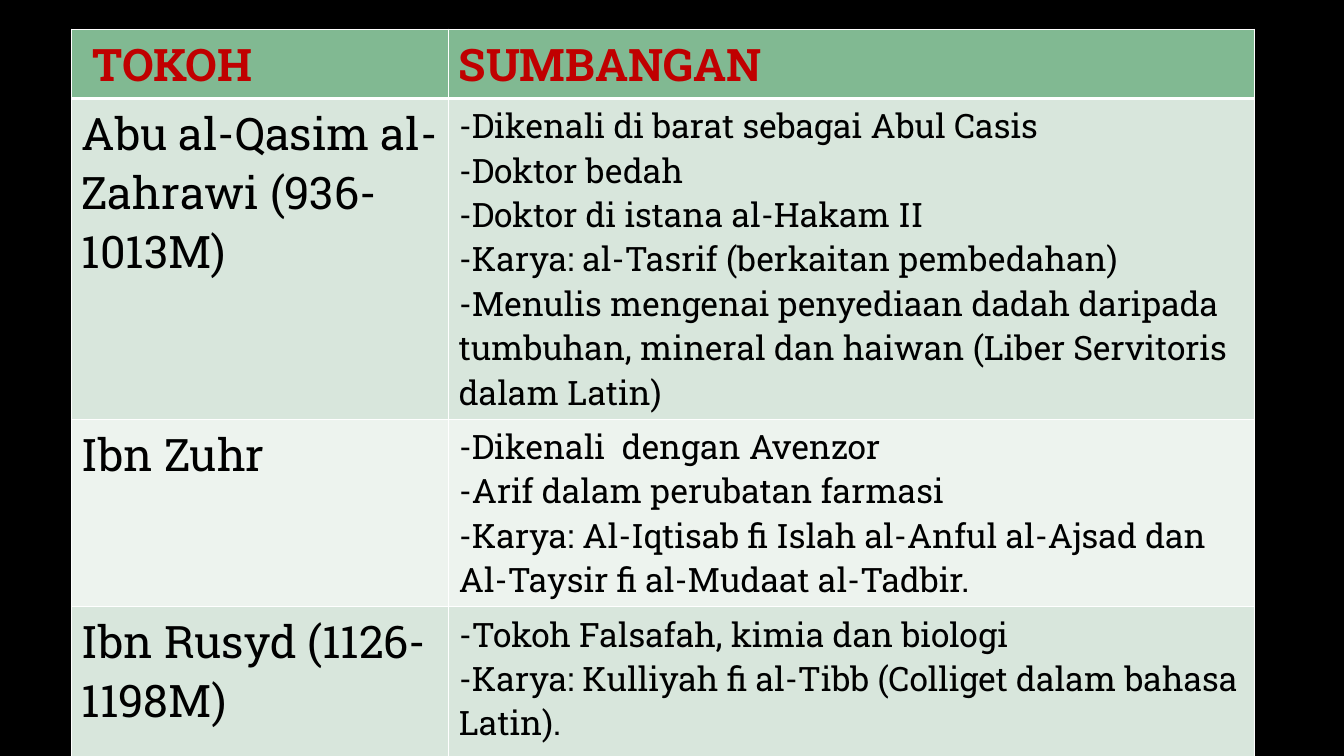
from dataclasses import dataclass

from lxml.etree import SubElement
from pptx import Presentation
from pptx.dml.color import RGBColor as Color
from pptx.oxml.ns import qn
from pptx.table import _Cell as Cell
from pptx.util import Inches, Pt

BLACK = RGB_TEXT = Color(0x00, 0x00, 0x00)
WHITE = Color(0xFF, 0xFF, 0xFF)
RED = Color(0xC0, 0x00, 0x00)
GREEN = Color(0x81, 0xB9, 0x92)
MINT = Color(0xD8, 0xE6, 0xDC)
PALE = Color(0xED, 0xF3, 0xEE)

FONT = "Roboto Slab"
WIDE, HIGH = Inches(13.33), Inches(7.5)
# Shares of the slide's size, in percent
LEFT, TOP = 5.33, 3.87
COLS = (28.06, 59.94)


@dataclass
class Row:
    name: str
    works: list[str]
    share: float
    fill: Color
    ink: Color = RGB_TEXT
    size: int = 24
    head: bool = False


ROWS = [
    Row(" TOKOH", ["SUMBANGAN"], 9.07, GREEN, RED, 32, True),
    Row("Abu al-Qasim al-Zahrawi (936-1013M)", [
        "-Dikenali di barat sebagai Abul Casis",
        "-Doktor bedah",
        "-Doktor di istana al-Hakam II",
        "-Karya: al-Tasrif (berkaitan pembedahan)",
        "-Menulis mengenai penyediaan dadah daripada tumbuhan, "
        "mineral dan haiwan (Liber Servitoris dalam Latin)",
    ], 36.67, MINT),
    Row("Ibn Zuhr", [
        "-Dikenali  dengan Avenzor",
        "-Arif dalam perubatan farmasi",
        "-Karya: Al-Iqtisab fi Islah al-Anful al-Ajsad dan "
        "Al-Taysir fi al-Mudaat al-Tadbir.",
    ], 21.47, PALE),
    Row("Ibn Rusyd (1126-1198M)", [
        "-Tokoh Falsafah, kimia dan biologi",
        "-Karya: Kulliyah fi al-Tibb (Colliget dalam bahasa Latin).",
    ], 22.4, MINT),
]


def across(share: float) -> int:
    return round(WIDE * share / 100)


def down(share: float) -> int:
    return round(HIGH * share / 100)


def edge(cell: Cell, top: int, bottom: int) -> None:
    """Rule the cell in white; call before its fill is set, as XML order asks."""
    props = cell._tc.get_or_add_tcPr()
    for side, width in (("L", 1), ("R", 1), ("T", top), ("B", bottom)):
        line = SubElement(props, qn(f"a:ln{side}"), w=str(Pt(width)))
        paint = SubElement(line, qn("a:solidFill"))
        SubElement(paint, qn("a:srgbClr"), val=str(WHITE))


def write(cell: Cell, lines: list[str], size: int, row: Row) -> None:
    cell.fill.solid()
    cell.fill.fore_color.rgb = row.fill
    cell.text_frame.text = "\n".join(lines)
    for para in cell.text_frame.paragraphs:
        font = para.font
        font.name, font.size, font.bold = FONT, Pt(size), row.head
        font.color.rgb = row.ink


def main() -> None:
    deck = Presentation()
    deck.slide_width, deck.slide_height = WIDE, HIGH
    slide = deck.slides.add_slide(deck.slide_layouts[6])
    back = slide.background.fill
    back.solid()
    back.fore_color.rgb = BLACK

    table = slide.shapes.add_table(
        len(ROWS), len(COLS), across(LEFT), down(TOP),
        across(sum(COLS)), down(sum(row.share for row in ROWS)),
    ).table
    table.horz_banding = False
    for col, share in zip(table.columns, COLS):
        col.width = across(share)
    for i, row in enumerate(ROWS):
        table.rows[i].height = down(row.share)
        for j, (lines, size) in enumerate((([row.name], 32), (row.works, row.size))):
            cell = table.cell(i, j)
            edge(cell, 3 if i == 1 else 1, 3 if row.head else 1)
            write(cell, lines, size, row)
    deck.save("out.pptx")


if __name__ == "__main__":
    main()
